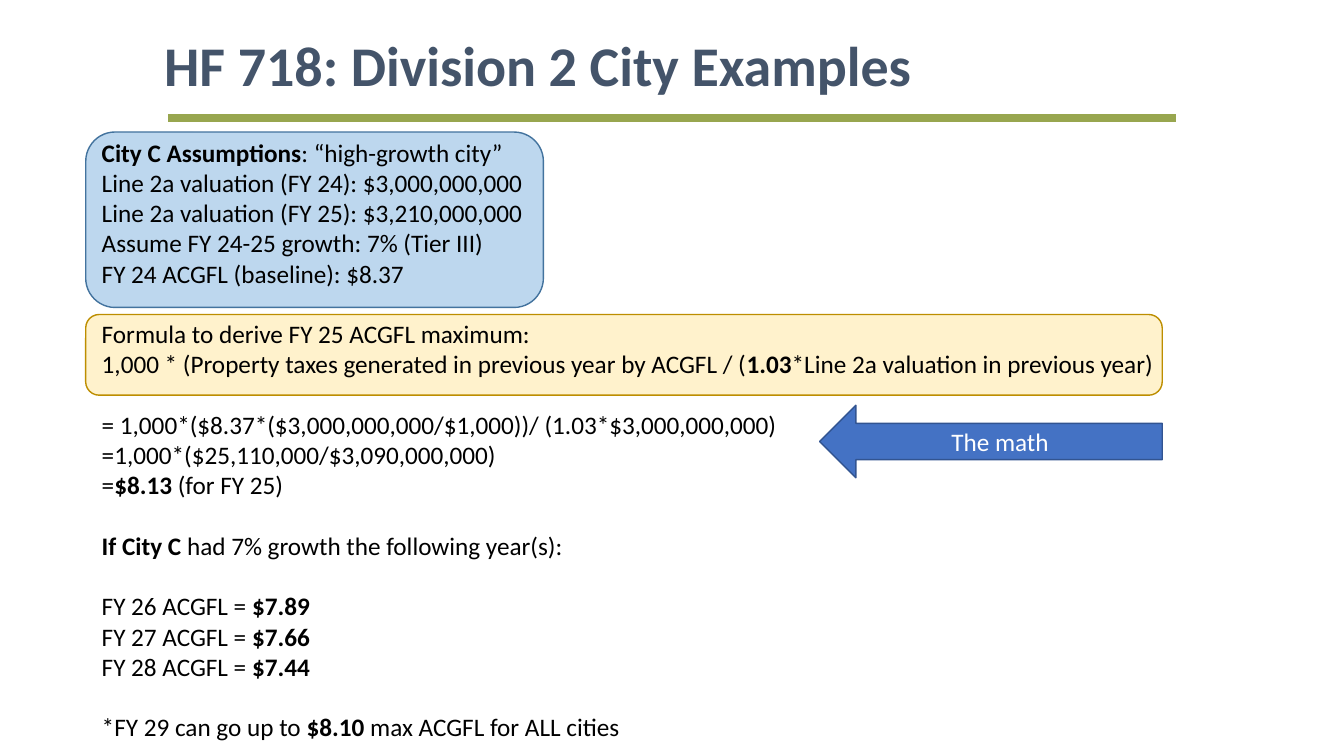
from lxml import etree
from pptx import Presentation
from pptx.dml.color import RGBColor
from pptx.enum.shapes import MSO_CONNECTOR, MSO_SHAPE
from pptx.enum.text import MSO_ANCHOR, PP_ALIGN
from pptx.oxml.ns import qn
from pptx.util import Inches, Pt

ROUNDED = MSO_SHAPE.ROUNDED_RECTANGLE
LEFT_ARROW = MSO_SHAPE.LEFT_ARROW
STRAIGHT = MSO_CONNECTOR.STRAIGHT
MIDDLE = MSO_ANCHOR.MIDDLE
CENTER = PP_ALIGN.CENTER

WIDTH, HEIGHT = Inches(13.33), Inches(7.5)
FONT = "Calibri"
BODY_SIZE = 18
LINE_PITCH = Pt(21.6)
PANEL_LEFT, PANEL_RIGHT = 6.38, 86.48
BODY_TOP = 17.47

COLORS = {
    "title": "44546A",
    "rule": "98A64F",
    "text": "000000",
    "white": "FFFFFF",
    "formula": "FFF2CC",
    "formula_line": "BD8E00",
    "assumptions": "BDD7EE",
    "assumptions_line": "43739E",
    "arrow": "4472C4",
    "arrow_line": "325491",
}

BLOCKS = [
    [
        [("City C Assumptions", True), (": “high-growth city”", False)],
        [("Line 2a valuation (FY 24): $3,000,000,000", False)],
        [("Line 2a valuation (FY 25): $3,210,000,000", False)],
        [("Assume FY 24-25 growth: 7% (Tier III)", False)],
        [("FY 24 ACGFL (baseline): $8.37", False)],
    ],
    [
        [("Formula to derive FY 25 ACGFL maximum:", False)],
        [("1,000 * (Property taxes generated in previous year by ACGFL / (", False),
         ("1.03", True), ("*Line 2a valuation in previous year)", False)],
    ],
    [
        [("= 1,000*($8.37*($3,000,000,000/$1,000))/ (1.03*$3,000,000,000)", False)],
        [("=1,000*($25,110,000/$3,090,000,000)", False)],
        [("=", False), ("$8.13 ", True), ("(for FY 25)", False)],
    ],
    [[("If City C", True), (" had 7% growth the following year(s):", False)]],
    [
        [(f"FY {year} ACGFL = ", False), (rate, True)]
        for year, rate in ((26, "$7.89"), (27, "$7.66"), (28, "$7.44"))
    ],
    [[("*FY 29 can go up to ", False), ("$8.10 ", True),
      ("max ACGFL for ALL cities", False)]],
]


def color(name):
    return RGBColor.from_string(COLORS[name])


def across(columns):
    return int(WIDTH * columns / 100)


def down(rows):
    return int(HEIGHT * rows / 100)


def place(left, top, width, height):
    return across(left), down(top), across(width), down(height)


def add_run(paragraph, text, size, color_name, bold=False):
    run = paragraph.add_run()
    run.text = text
    run.font.name = FONT
    run.font.size = Pt(size)
    run.font.bold = bold
    run.font.color.rgb = color(color_name)


def add_panel(slide, kind, area, name):
    shape = slide.shapes.add_shape(kind, *place(*area))
    shape.shadow.inherit = False
    shape.fill.solid()
    shape.fill.fore_color.rgb = color(name)
    shape.line.color.rgb = color(f"{name}_line")
    shape.line.width = Pt(1)
    return shape


def add_rule(slide, left, right, row):
    rule = slide.shapes.add_connector(
        STRAIGHT, across(left), down(row), across(right), down(row))
    rule.line.color.rgb = color("rule")
    rule.line.width = Pt(6)
    etree.SubElement(rule._element.spPr, qn("a:effectLst"))


def add_text_frame(slide, area):
    frame = slide.shapes.add_textbox(*place(*area)).text_frame
    frame.word_wrap = True
    return frame


def add_title(slide, text):
    frame = add_text_frame(slide, (11.48, 3.33, 75, 10.27))
    add_run(frame.paragraphs[0], text, 40, "title", True)


def add_body(slide, blocks):
    frame = add_text_frame(slide, (6.83, BODY_TOP, 89.18, 81.33))
    paragraph = frame.paragraphs[0]
    for block_index, block in enumerate(blocks):
        for line_index, runs in enumerate(block):
            if block_index or line_index:
                paragraph = frame.add_paragraph()
            paragraph.line_spacing = LINE_PITCH
            if block_index and not line_index:
                paragraph.space_before = LINE_PITCH
            for text, bold in runs:
                add_run(paragraph, text, BODY_SIZE, "text", bold)


def add_arrow(slide, text):
    left = 60.98
    arrow = add_panel(slide, LEFT_ARROW, (left, 53.6, PANEL_RIGHT - left, 9.6), "arrow")
    arrow.text_frame.vertical_anchor = MIDDLE
    paragraph = arrow.text_frame.paragraphs[0]
    paragraph.alignment = CENTER
    add_run(paragraph, text, BODY_SIZE, "white")


def main():
    presentation = Presentation()
    presentation.slide_width, presentation.slide_height = WIDTH, HEIGHT
    slide = presentation.slides.add_slide(presentation.slide_layouts[6])
    add_panel(slide, ROUNDED,
              (PANEL_LEFT, 41.6, PANEL_RIGHT - PANEL_LEFT, 10.67), "formula")
    add_panel(slide, ROUNDED, (PANEL_LEFT, BODY_TOP, 34.05, 23.2), "assumptions")
    add_rule(slide, 12.53, 87.53, 15.6)
    add_title(slide, "HF 718: Division 2 City Examples")
    add_body(slide, BLOCKS)
    add_arrow(slide, "The math")
    presentation.save("out.pptx")


if __name__ == "__main__":
    main()
